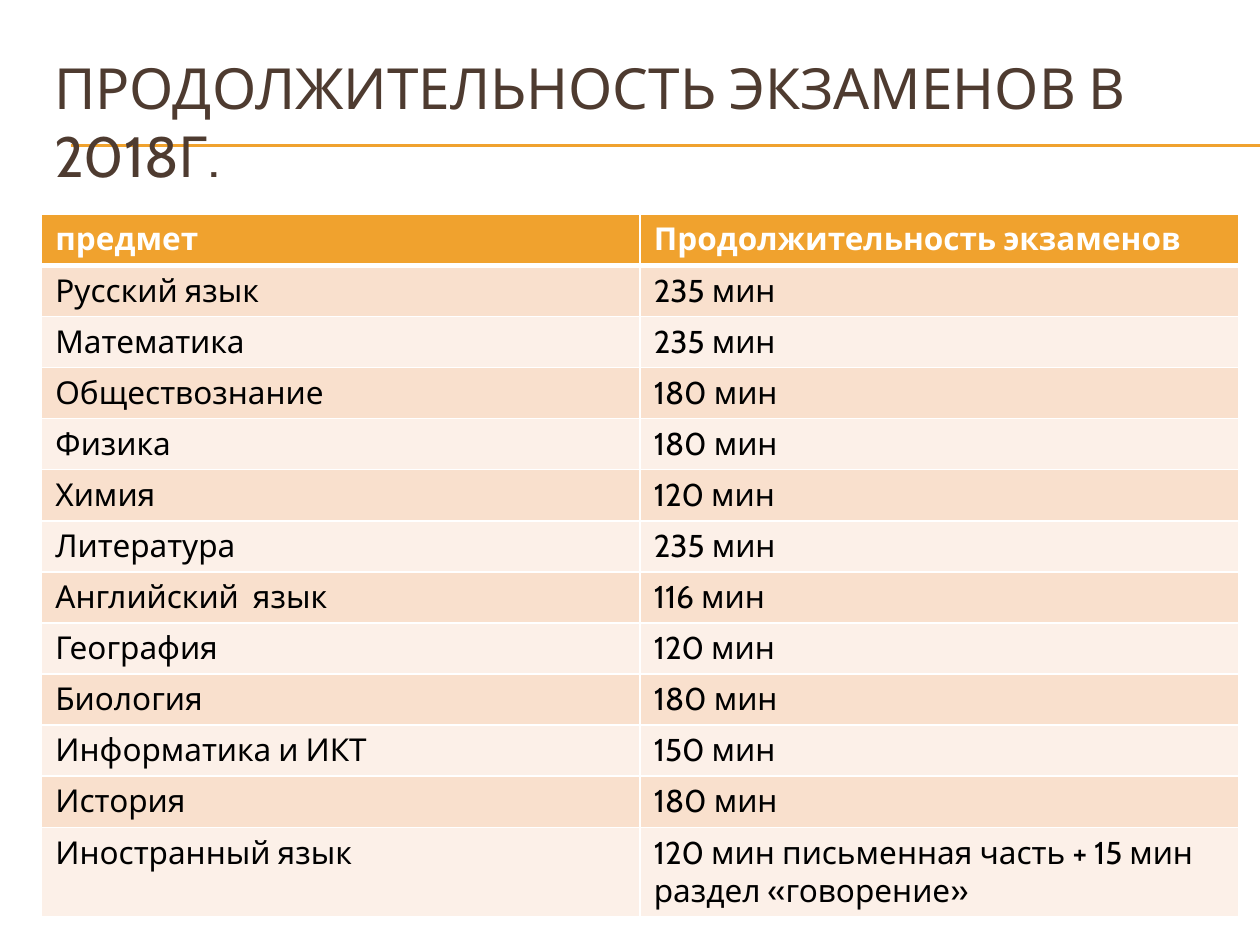
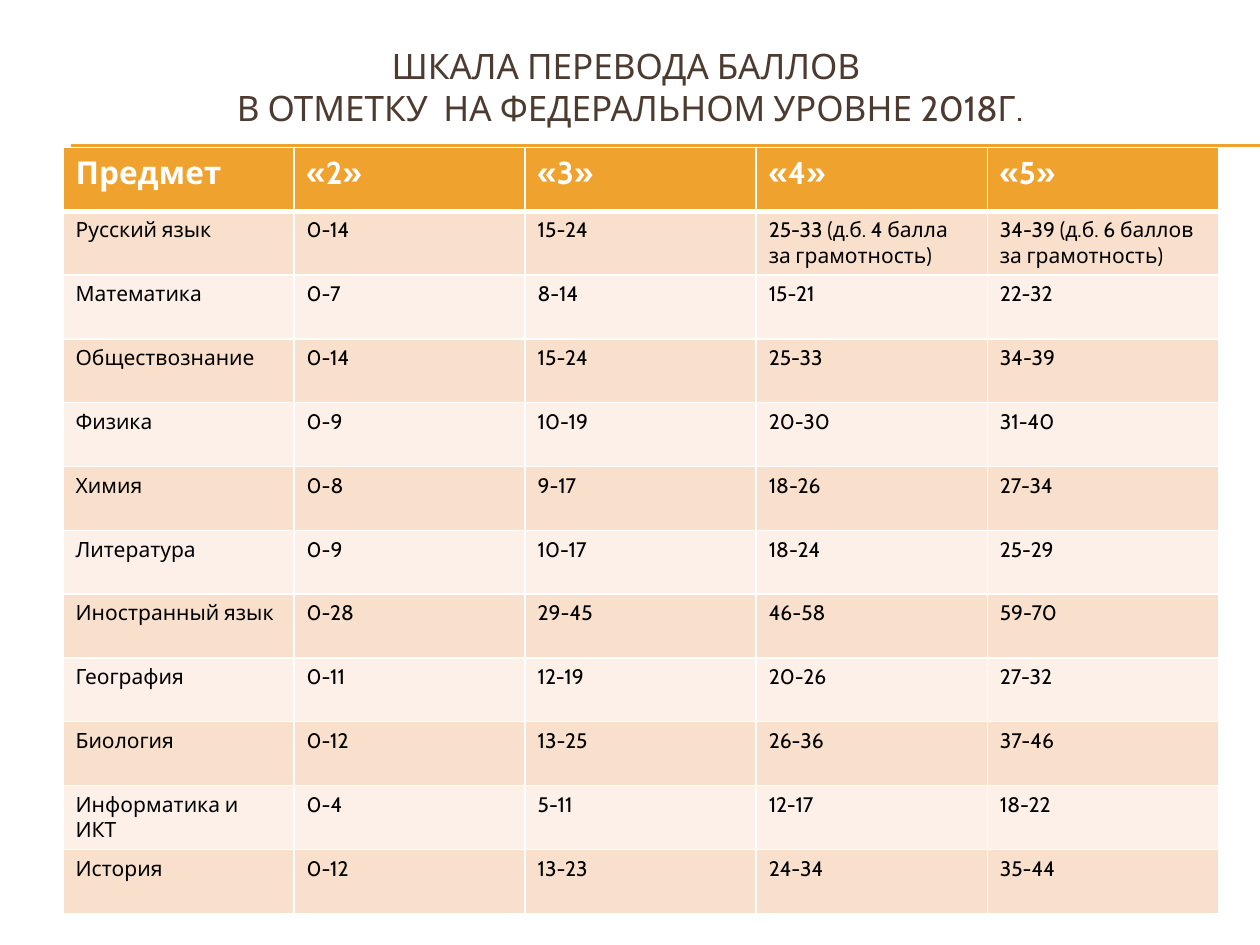
from dataclasses import dataclass

import pptx
import pptx.dml.color
import pptx.enum.shapes
import pptx.enum.text
import pptx.oxml
import pptx.oxml.ns
import pptx.util
from pptx.util import Inches, Pt


@dataclass(frozen=True)
class Theme:
    font: str = "Cabin"
    accent: str = "F0A22E"
    title: str = "4E3B30"
    text: str = "000000"
    white: str = "FFFFFF"
    bands: tuple = ("F9E0CD", "FCF0E8")
    header_size: float = 18
    rule_width: float = 0.75
    border: float = 1
    header_border: float = 3


THEME = Theme()
ALIGN = pptx.enum.text.PP_ALIGN
RULE_LEFT, RULE_TOPS = 0.56, (1.15, 1.16)

SLIDES = [
    {
        "title": ["ПРОДОЛЖИТЕЛЬНОСТЬ ЭКЗАМЕНОВ В 2018Г."],
        "title_box": (0.33, 0.5, 9.5, 0.92),
        "title_size": 32.4,
        "title_align": ALIGN.LEFT,
        "table_box": (0.33, 1.7, 9.5),
        "row_height": 0.405,
        "side_margin": 0.11,
        "body_size": 18,
        "rows": [
            ("предмет", "Продолжительность экзаменов"),
            ("Русский язык", "235 мин"),
            ("Математика", "235 мин"),
            ("Обществознание", "180 мин"),
            ("Физика", "180 мин"),
            ("Химия", "120 мин"),
            ("Литература", "235 мин"),
            ("Английский  язык", "116 мин"),
            ("География", "120 мин"),
            ("Биология", "180 мин"),
            ("Информатика и ИКТ", "150 мин"),
            ("История", "180 мин"),
            ("Иностранный язык", "120 мин письменная часть + 15 мин раздел «говорение»"),
        ],
    },
    {
        "title": ["ШКАЛА ПЕРЕВОДА БАЛЛОВ ", "В ОТМЕТКУ  НА ФЕДЕРАЛЬНОМ УРОВНЕ 2018Г."],
        "title_box": (0.5, 0.3, 9, 0.78),
        "title_size": 20,
        "title_align": ALIGN.CENTER,
        "table_box": (0.5, 1.17, 9.17),
        "row_height": 6.08 / 12,
        "side_margin": 0.1,
        "body_size": 12,
        "rows": [
            ("Предмет", "«2»", "«3»", "«4»", "«5»"),
            ("Русский язык", "0-14", "15-24", "25-33 (д.б. 4 балла за грамотность)",
             "34-39 (д.б. 6 баллов за грамотность)"),
            ("Математика", "0-7", "8-14", "15-21", "22-32"),
            ("Обществознание", "0-14", "15-24", "25-33", "34-39"),
            ("Физика", "0-9", "10-19", "20-30", "31-40"),
            ("Химия", "0-8", "9-17", "18-26", "27-34"),
            ("Литература", "0-9", "10-17", "18-24", "25-29"),
            ("Иностранный язык", "0-28", "29-45", "46-58", "59-70"),
            ("География", "0-11", "12-19", "20-26", "27-32"),
            ("Биология", "0-12", "13-25", "26-36", "37-46"),
            ("Информатика и ИКТ", "0-4", "5-11", "12-17", "18-22"),
            ("История", "0-12", "13-23", "24-34", "35-44"),
        ],
    },
]


def rgb(value):
    return pptx.dml.color.RGBColor.from_string(value)


def add_run(paragraph, text, size, color, bold=False):
    run = paragraph.add_run()
    run.text = text
    run.font.name = THEME.font
    run.font.size = Pt(size)
    run.font.bold = bold
    run.font.color.rgb = rgb(color)


def add_rules(slide, slide_width):
    """Draw the double rule behind everything else on the slide."""
    for top in RULE_TOPS:
        rule = slide.shapes.add_connector(
            pptx.enum.shapes.MSO_CONNECTOR.STRAIGHT,
            Inches(RULE_LEFT), Inches(top), slide_width, Inches(top))
        rule.line.color.rgb = rgb(THEME.accent)
        rule.line.width = Pt(THEME.rule_width)
        properties = rule.element.spPr
        properties.append(pptx.oxml.parse_xml(
            f"<a:effectLst {pptx.oxml.ns.nsdecls('a')}/>"))
        slide.shapes.element.insert(2, rule.element)


def fill_title(slide, content):
    title = slide.shapes.title
    title.left, title.top, title.width, title.height = map(Inches, content["title_box"])
    frame = title.text_frame
    frame.word_wrap = True
    frame.auto_size = pptx.enum.text.MSO_AUTO_SIZE.NONE
    frame.vertical_anchor = pptx.enum.text.MSO_ANCHOR.MIDDLE
    paragraph = frame.paragraphs[0]
    paragraph.alignment = content["title_align"]
    for index, line in enumerate(content["title"]):
        if index:
            paragraph.add_line_break()
        add_run(paragraph, line, content["title_size"], THEME.title)


def set_borders(cell, row_index):
    """Give the cell white borders, thicker below the header row."""
    widths = dict.fromkeys("LRTB", THEME.border)
    if row_index == 0:
        widths["B"] = THEME.header_border
    elif row_index == 1:
        widths["T"] = THEME.header_border
    properties = cell._tc.get_or_add_tcPr()
    for side, width in widths.items():
        properties.append(pptx.oxml.parse_xml(
            f'<a:ln{side} {pptx.oxml.ns.nsdecls("a")} w="{Pt(width)}">'
            f'<a:solidFill><a:srgbClr val="{THEME.white}"/></a:solidFill></a:ln{side}>'))


def add_score_table(slide, content):
    rows = content["rows"]
    left, top, width = content["table_box"]
    frame = slide.shapes.add_table(
        len(rows), len(rows[0]), Inches(left), Inches(top),
        Inches(width), Inches(content["row_height"] * len(rows)))
    table = frame.table
    table.horz_banding = False
    for row_index, values in enumerate(rows):
        is_header = row_index == 0
        fill = THEME.accent if is_header else THEME.bands[(row_index - 1) % 2]
        color = THEME.white if is_header else THEME.text
        size = THEME.header_size if is_header else content["body_size"]
        for column_index, value in enumerate(values):
            cell = table.cell(row_index, column_index)
            cell.margin_left = cell.margin_right = Inches(content["side_margin"])
            set_borders(cell, row_index)
            cell.fill.solid()
            cell.fill.fore_color.rgb = rgb(fill)
            add_run(cell.text_frame.paragraphs[0], value, size, color, is_header)


def main():
    presentation = pptx.Presentation()
    presentation.slide_width, presentation.slide_height = Inches(10), Inches(7.5)
    title_only = presentation.slide_layouts.get_by_name("Title Only")
    for content in SLIDES:
        slide = presentation.slides.add_slide(title_only)
        add_rules(slide, presentation.slide_width)
        fill_title(slide, content)
        add_score_table(slide, content)
    presentation.save("out.pptx")


if __name__ == "__main__":
    main()
